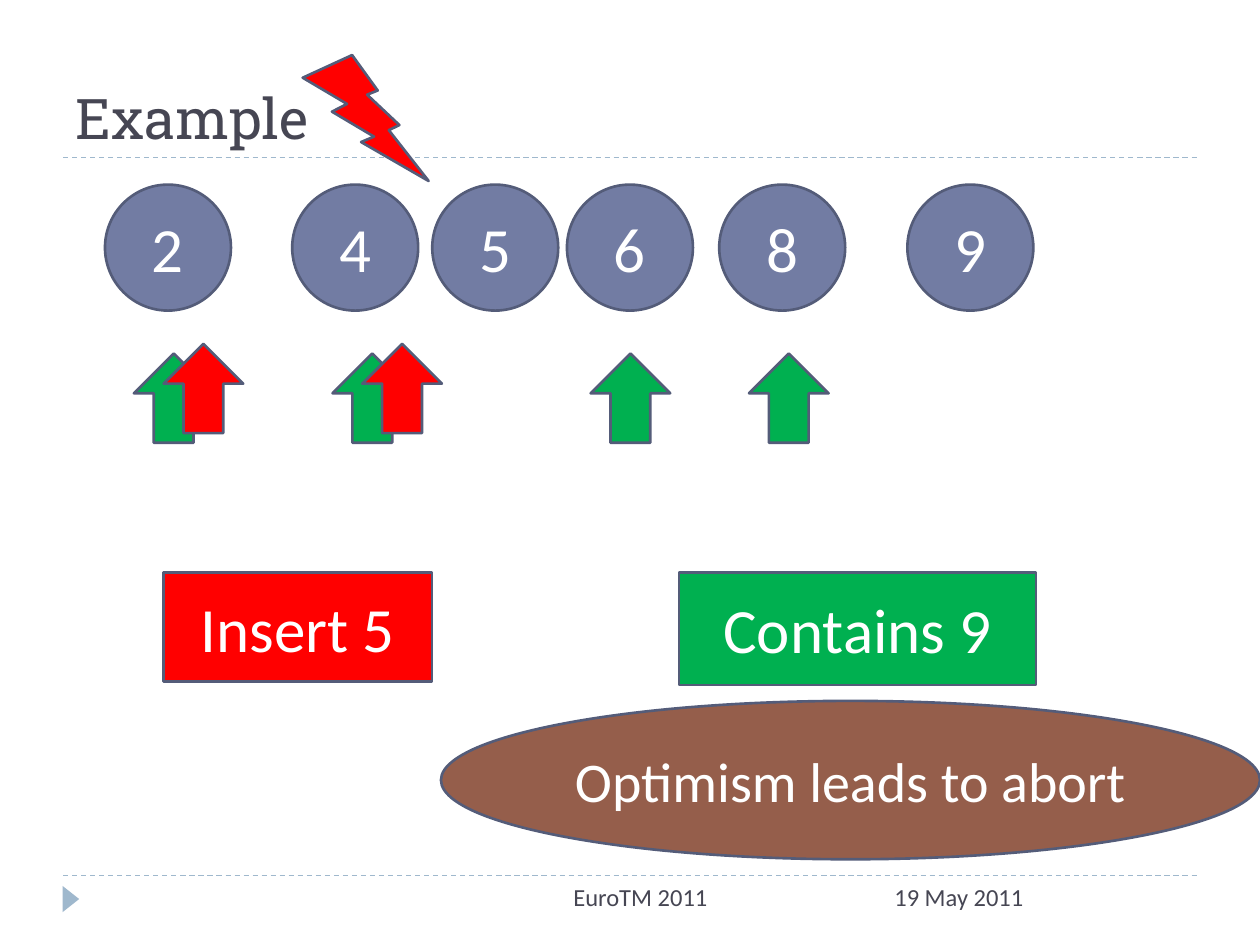
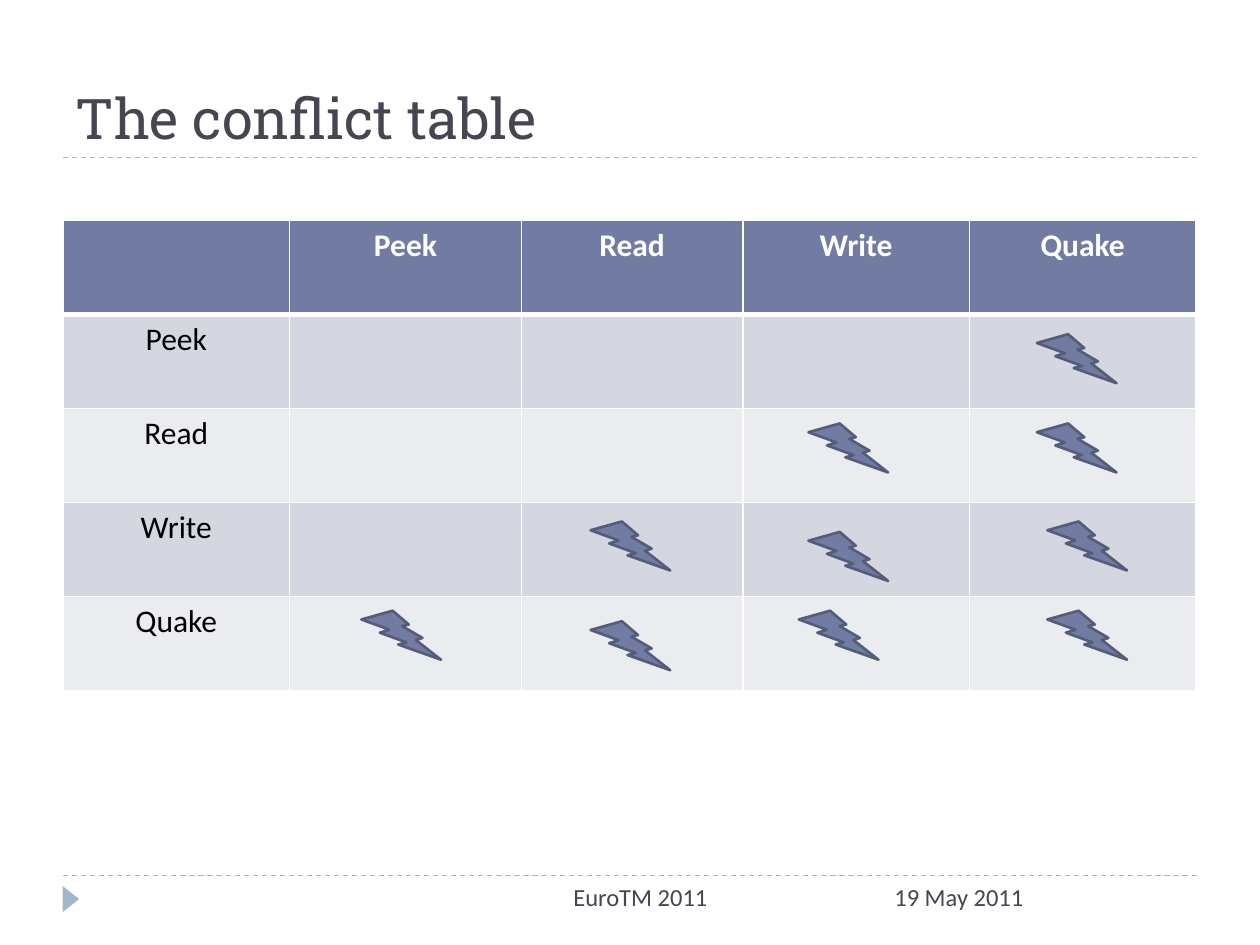
import pptx
import pptx.util
import pptx.dml.color
import pptx.enum.dml
import pptx.enum.shapes
import pptx.enum.text
import pptx.oxml
import pptx.oxml.ns

Pt = pptx.util.Pt
SHAPE = pptx.enum.shapes.MSO_SHAPE
ALIGN = pptx.enum.text.PP_ALIGN
ANCHOR = pptx.enum.text.MSO_ANCHOR
NS = pptx.oxml.ns.nsdecls("a")

COLORS = {
    "ink": "464653", "rule": "9FB8CD", "node": "727CA3", "edge": "545C79",
    "insert": "FF0000", "contains": "00B050", "verdict": "955E4B",
    "odd_row": "D5D7E0", "even_row": "EBECF0", "white": "FFFFFF", "black": "000000",
}
BODY_FONT = "Calibri"
TITLE_FONT = "Roboto Slab"


def rgb(name):
    return pptx.dml.color.RGBColor.from_string(COLORS[name])


class Deck:
    def __init__(self):
        self.prs = pptx.Presentation()
        self.prs.slide_width, self.prs.slide_height = Pt(720), Pt(540)
        self.slide = None

    def new_slide(self, title):
        self.slide = self.prs.slides.add_slide(self.prs.slide_layouts[5])
        for y in (500.4, 90):
            self.rule(y)
        marker = self.shape(SHAPE.ISOSCELES_TRIANGLE, 33, 509, 15, 9.5, "rule", edge=None)
        marker.rotation = 90
        sp = self.slide.shapes.title
        sp.left, sp.top, sp.width, sp.height = Pt(36), Pt(12), Pt(648), Pt(78)
        self.set_text(sp.text_frame, title, 32, "ink", ALIGN.LEFT, ANCHOR.BOTTOM, TITLE_FONT)
        self.label("19 May 2011", 504, 180, ALIGN.LEFT)
        self.label("EuroTM 2011", 228, 276, ALIGN.CENTER)

    def set_text(self, tf, text, size, color, align=ALIGN.CENTER, anchor=ANCHOR.MIDDLE,
                 font=BODY_FONT):
        tf.text = text
        tf.word_wrap = True
        tf.auto_size = pptx.enum.text.MSO_AUTO_SIZE.NONE
        tf.vertical_anchor = anchor
        self.style(tf.paragraphs[0], size, color, align, font)

    def style(self, p, size, color, align, font=BODY_FONT, bold=False):
        p.alignment = align
        for r in p.runs:
            r.font.size, r.font.name, r.font.bold = Pt(size), font, bold
            r.font.color.rgb = rgb(color)

    def rule(self, y):
        line = self.slide.shapes.add_connector(
            pptx.enum.shapes.MSO_CONNECTOR.STRAIGHT, Pt(36), Pt(y), Pt(684), Pt(y))
        line.line.color.rgb = rgb("rule")
        line.line.width = Pt(0.75)
        line.line.dash_style = pptx.enum.dml.MSO_LINE.DASH
        line._element.spPr.append(pptx.oxml.parse_xml(f"<a:effectLst {NS}/>"))

    def label(self, text, x, width, align):
        sp = self.slide.shapes.add_textbox(Pt(x), Pt(500.4), Pt(width), Pt(29))
        self.set_text(sp.text_frame, text, 14, "ink", align, ANCHOR.TOP)

    def shape(self, kind, x, y, width, height, fill, text="", size=36, edge="edge"):
        sp = self.slide.shapes.add_shape(kind, Pt(x), Pt(y), Pt(width), Pt(height))
        sp.shadow.inherit = False
        sp.fill.solid()
        sp.fill.fore_color.rgb = rgb(fill)
        if edge:
            sp.line.color.rgb = rgb(edge)
            sp.line.width = Pt(1.5)
        else:
            sp.line.fill.background()
        if text:
            self.set_text(sp.text_frame, text, size, "white")
        return sp

    def borders(self, cell, top, bottom):
        tc_pr = cell._tc.get_or_add_tcPr()
        for i, (side, width) in enumerate((("L", 1), ("R", 1), ("T", top), ("B", bottom))):
            tc_pr.insert(i, pptx.oxml.parse_xml(
                f'<a:ln{side} {NS} w="{Pt(width)}"><a:solidFill>'
                f'<a:srgbClr val="{COLORS["white"]}"/></a:solidFill></a:ln{side}>'))

    def table(self, rows, x, y, widths, row_height):
        frame = self.slide.shapes.add_table(
            len(rows), len(widths), Pt(x), Pt(y), Pt(sum(widths)), Pt(row_height * len(rows)))
        table = frame.table
        for column, width in zip(table.columns, widths):
            column.width = Pt(width)
        for i, texts in enumerate(rows):
            table.rows[i].height = Pt(row_height)
            header = i == 0
            fill = "node" if header else ("even_row", "odd_row")[i % 2]
            for j, text in enumerate(texts):
                cell = table.cell(i, j)
                cell.text = text
                self.style(cell.text_frame.paragraphs[0], 18,
                           "white" if header else "black", ALIGN.CENTER, bold=header)
                cell.fill.solid()
                cell.fill.fore_color.rgb = rgb(fill)
                self.borders(cell, 3 if i == 1 else 1, 3 if header else 1)


def build_example(deck):
    deck.new_slide("Example")
    nodes = {"2": 60, "4": 167, "5": 247, "6": 324, "8": 411, "9": 518.5}
    for value, x in nodes.items():
        deck.shape(SHAPE.OVAL, x, 105.5, 72, 72, "node", value)
    deck.shape(SHAPE.RECTANGLE, 93.5, 327, 153.5, 62.5, "insert", "Insert 5")
    deck.shape(SHAPE.RECTANGLE, 388, 327, 204, 64.5, "contains", "Contains 9")
    steps = (("contains", 202, (76.5, 190, 337.5, 428)), ("insert", 196.5, (93.5, 207)))
    for fill, y, xs in steps:
        for x in xs:
            deck.shape(SHAPE.UP_ARROW, x, y, 45.5, 51, fill)
    deck.shape(SHAPE.LIGHTNING_BOLT, 173, 31.5, 72, 72, "insert")
    deck.shape(SHAPE.OVAL, 252, 400.5, 468, 90.5, "verdict", "Optimism leads to abort", 32)


def build_conflict_table(deck):
    deck.new_slide("The conflict table")
    operations = ["Peek", "Read", "Write", "Quake"]
    rows = [[""] + operations] + [[name] + [""] * len(operations) for name in operations]
    deck.table(rows, 36, 126, (129.5, 132.5, 126.5, 129.5, 129.5), 53.7)
    conflicts = (
        (592.5, 191), (462, 242), (592.5, 242),
        (337.5, 298), (462, 304), (598.5, 298),
        (206.5, 349), (337.5, 355), (456.5, 349), (598.5, 349),
    )
    for x, y in conflicts:
        deck.shape(SHAPE.LIGHTNING_BOLT, x, y, 45.5, 28, "node")


def main():
    deck = Deck()
    build_example(deck)
    build_conflict_table(deck)
    deck.prs.save("out.pptx")


if __name__ == "__main__":
    main()
